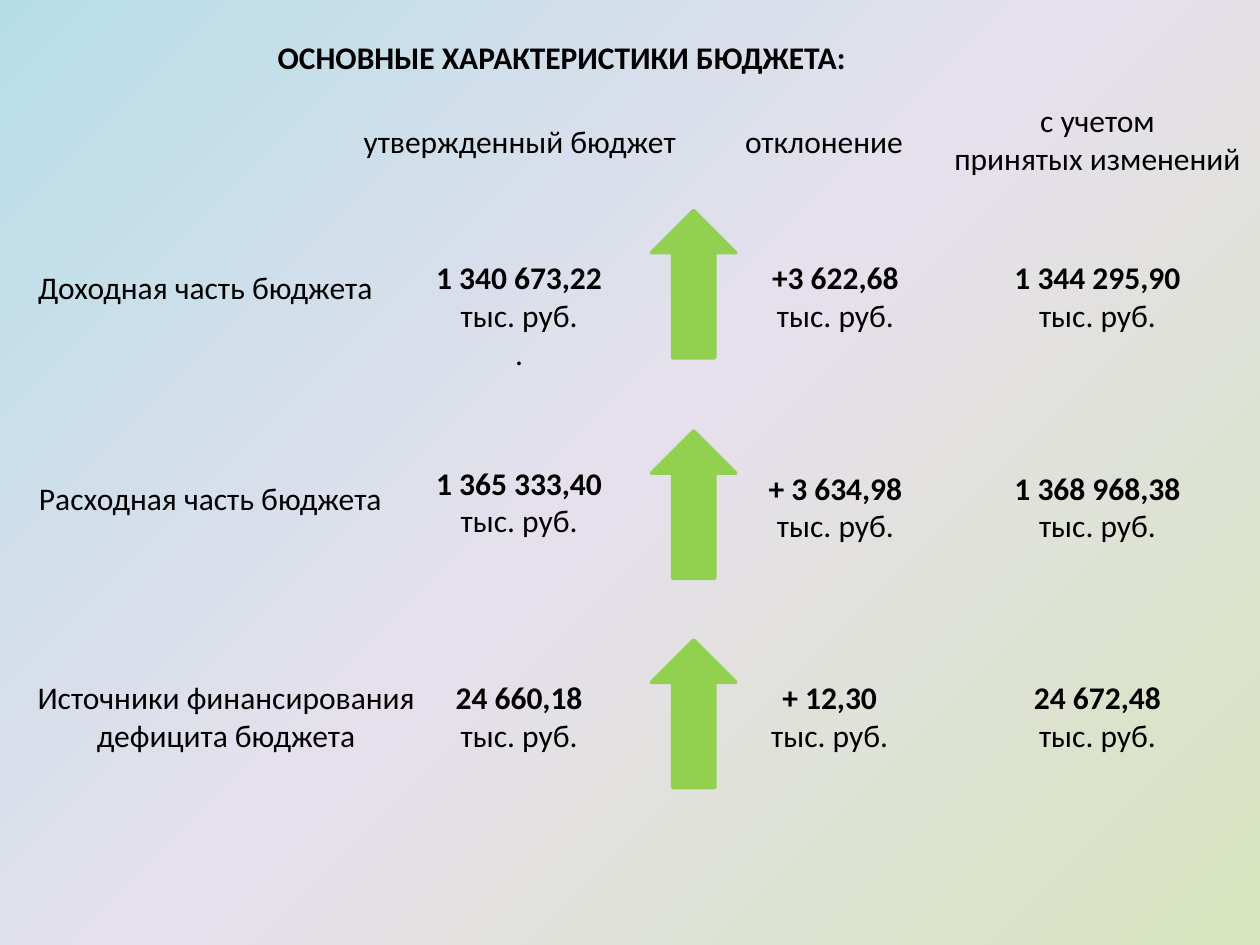
from pptx import Presentation
from pptx.dml.color import RGBColor
from pptx.enum.shapes import MSO_SHAPE
from pptx.enum.text import MSO_AUTO_SIZE, PP_ALIGN
from pptx.oxml import parse_xml
from pptx.oxml.ns import nsdecls, qn
from pptx.util import Inches, Pt

BLACK = RGBColor(0x00, 0x00, 0x00)
ARROW = RGBColor(0x92, 0xD0, 0x50)
GREEN = RGBColor(0xD7, 0xE4, 0xBD)
LILAC = RGBColor(0xE6, 0xE0, 0xEC)
AQUA = RGBColor(0xB7, 0xDE, 0xE8)

FONT = {"name": "Calibri", "size": Pt(18)}
UNIT = "тыс. руб."

HEADERS = [
    ((2.75, 0.92, 2.75, 0.4), ["утвержденный бюджет"]),
    ((5.75, 0.92, 1.58, 0.4), ["отклонение"]),
    ((7.42, 0.75, 2.58, 0.71), ["с учетом", "принятых изменений"]),
]
ROWS = [
    {"label": ((0.17, 2.08, 2.92, 0.4), "Доходная часть бюджета"),
     "arrow": (5.17, 1.67, 0.67, 1.17),
     "values": [((3.33, 2, 1.58, 1.01), ["1 340 673,22", UNIT, "."]),
                ((5.92, 2, 1.42, 0.71), ["+3 622,68", UNIT]),
                ((7.75, 2, 1.92, 0.71), ["1 344 295,90", UNIT])]},
    {"label": ((0.17, 3.75, 3, 0.4), "Расходная часть бюджета"),
     "arrow": (5.17, 3.42, 0.67, 1.17),
     "values": [((3.33, 3.63, 1.58, 0.71), ["1 365 333,40", UNIT]),
                ((5.92, 3.67, 1.42, 0.71), ["+ 3 634,98", UNIT]),
                ((7.92, 3.67, 1.58, 0.71), ["1 368 968,38", UNIT])]},
    {"label": ((0.17, 5.33, 3.25, 0.71),
               "Источники финансирования дефицита бюджета"),
     "arrow": (5.17, 5.08, 0.67, 1.17),
     "values": [((3.33, 5.33, 1.58, 0.71), ["24 660,18", UNIT]),
                ((5.92, 5.33, 1.33, 0.71), ["+ 12,30", UNIT]),
                ((7.92, 5.33, 1.58, 0.71), ["24 672,48", UNIT])]},
]


def add_background(s):
    """Fill the slide with a gradient spreading from the bottom right corner."""
    s.background.fill.gradient()
    old = s.element.find(".//" + qn("a:gradFill"))
    stops = "".join(
        f'<a:gs pos="{pos}"><a:srgbClr val="{color}"/></a:gs>'
        for pos, color in ((0, GREEN), (50000, LILAC), (100000, AQUA)))
    new = parse_xml(
        f'<a:gradFill {nsdecls("a")} rotWithShape="1"><a:gsLst>{stops}</a:gsLst>'
        '<a:path path="circle"><a:fillToRect l="100000" t="100000"/></a:path>'
        '<a:tileRect r="-100000" b="-100000"/></a:gradFill>')
    old.getparent().replace(old, new)


def add_text(s, box, lines, bold_first=False, wrap=True):
    """Place centred lines in a box, the first one bold if asked."""
    tf = s.shapes.add_textbox(*map(Inches, box)).text_frame
    tf.word_wrap = wrap
    tf.auto_size = MSO_AUTO_SIZE.SHAPE_TO_FIT_TEXT
    for i, line in enumerate(lines):
        p = tf.paragraphs[0] if i == 0 else tf.add_paragraph()
        p.alignment = PP_ALIGN.CENTER
        r = p.add_run()
        r.text = line
        for key, value in {**FONT, "bold": bold_first and i == 0}.items():
            setattr(r.font, key, value)
        r.font.color.rgb = BLACK


def add_growth_arrow(s, box):
    """Place a green arrow pointing up."""
    sp = s.shapes.add_shape(MSO_SHAPE.DOWN_ARROW, *map(Inches, box))
    sp.rotation = 180
    sp.shadow.inherit = False
    sp.fill.solid()
    sp.fill.fore_color.rgb = ARROW
    sp.line.color.rgb = ARROW
    sp.line.width = Pt(2)


def add_row(s, row):
    """Place one budget line: label, arrow and three amounts."""
    box, label = row["label"]
    add_text(s, box, [label])
    add_growth_arrow(s, row["arrow"])
    for box, lines in row["values"]:
        add_text(s, box, lines, bold_first=True)


def main():
    """Build the slide and save it."""
    prs = Presentation()
    prs.slide_width, prs.slide_height = Inches(10), Inches(7.5)
    s = prs.slides.add_slide(prs.slide_layouts[6])
    add_background(s)
    add_text(s, (2.08, 0.25, 4.76, 0.4), ["ОСНОВНЫЕ ХАРАКТЕРИСТИКИ БЮДЖЕТА:"],
             bold_first=True, wrap=False)
    for box, lines in HEADERS:
        add_text(s, box, lines)
    for row in ROWS:
        add_row(s, row)
    prs.save("out.pptx")


if __name__ == "__main__":
    main()
